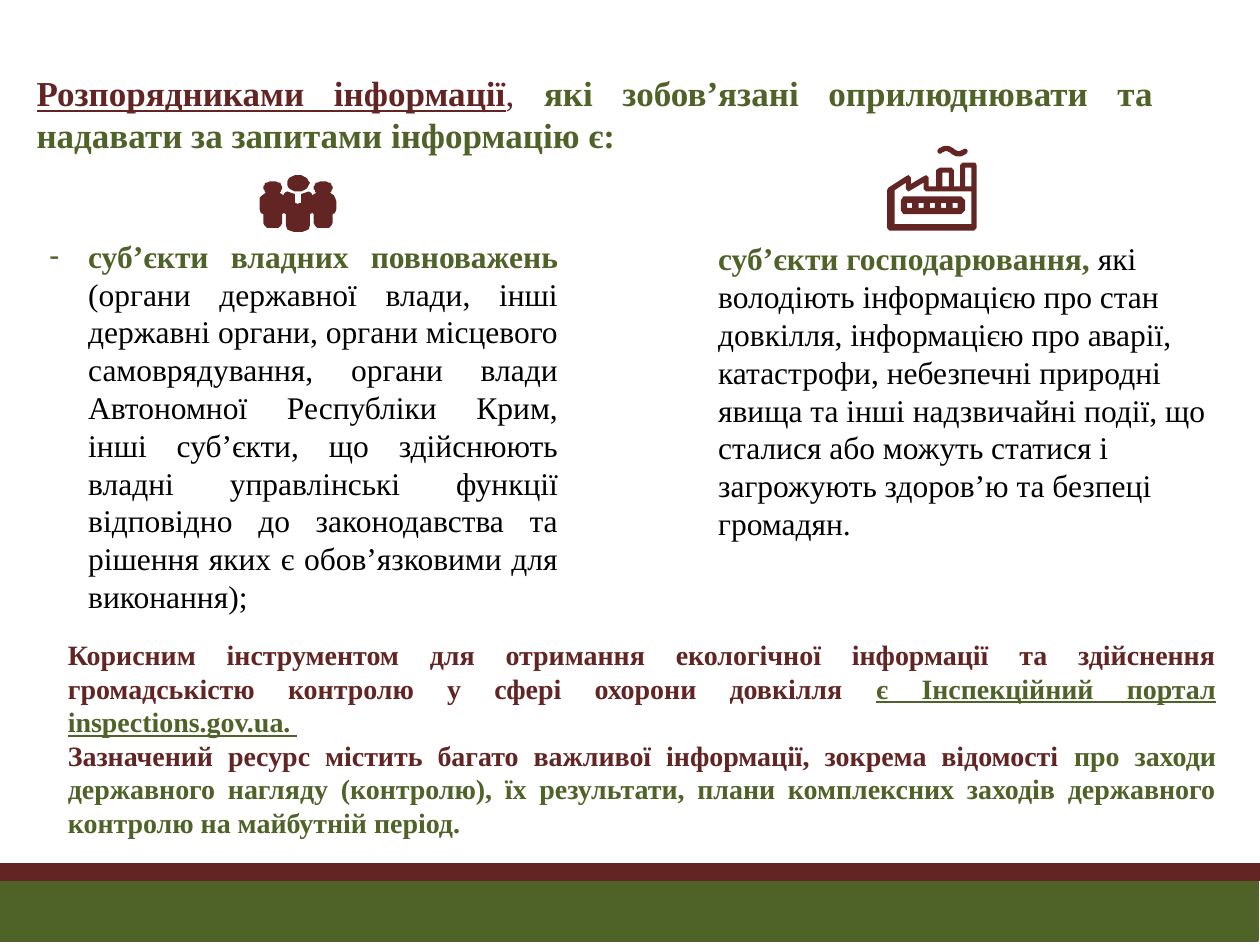
import math
from dataclasses import dataclass

from lxml import etree
from pptx import Presentation
from pptx.dml.color import RGBColor
from pptx.enum.shapes import MSO_SHAPE
from pptx.enum.text import MSO_ANCHOR, MSO_AUTO_SIZE, PP_ALIGN
from pptx.oxml.ns import qn
from pptx.util import Inches, Pt

RECTANGLE = MSO_SHAPE.RECTANGLE
TOP = MSO_ANCHOR.TOP
NO_AUTOFIT = MSO_AUTO_SIZE.NONE
LEFT = PP_ALIGN.LEFT
JUSTIFY = PP_ALIGN.JUSTIFY


@dataclass(frozen=True)
class Theme:
    """Colours and type of the slide."""
    font: str = "Times New Roman"
    green: RGBColor = RGBColor(0x4F, 0x62, 0x28)
    maroon: RGBColor = RGBColor(0x63, 0x25, 0x23)
    black: RGBColor = RGBColor(0, 0, 0)
    title_size: Pt = Pt(20)
    body_size: Pt = Pt(18)
    note_size: Pt = Pt(16)
    line_width: Pt = Pt(2)
    smoke_width: Pt = Pt(3)


THEME = Theme()


def place(shape, box):
    """Move and size a shape to a box given in inches."""
    shape.left, shape.top, shape.width, shape.height = map(Inches, box)


def paint(shape, color, line_width=None):
    """Give a shape a flat fill and an optional line of the same colour."""
    shape.shadow.inherit = False
    shape.fill.solid()
    shape.fill.fore_color.rgb = color
    if line_width is None:
        shape.line.fill.background()
    else:
        shape.line.color.rgb = color
        shape.line.width = line_width


def add_band(slide, box, color):
    """Add a flat full-width band."""
    band = slide.shapes.add_shape(RECTANGLE, *map(Inches, box))
    paint(band, color, THEME.line_width)


def set_bullet(paragraph, character, indent):
    """Set a hanging bullet, or none when the character is empty."""
    properties = paragraph._p.get_or_add_pPr()
    properties.set("marL", str(Inches(indent)))
    properties.set("indent", str(-Inches(indent)))
    if character:
        etree.SubElement(properties, qn("a:buChar")).set("char", character)
    else:
        etree.SubElement(properties, qn("a:buNone"))


def write(shape, paragraphs, size, alignment, bullet="", indent=0):
    """Fill a text shape with paragraphs of (text, colour, bold, underline) runs."""
    frame = shape.text_frame
    frame.word_wrap = True
    frame.auto_size = NO_AUTOFIT
    frame.vertical_anchor = TOP
    for index, runs in enumerate(paragraphs):
        paragraph = frame.add_paragraph() if index else frame.paragraphs[0]
        paragraph.alignment = alignment
        paragraph.space_before = Pt(0)
        set_bullet(paragraph, bullet, indent)
        for text, color, bold, underline in runs:
            run = paragraph.add_run()
            run.text = text
            run.font.name = THEME.font
            run.font.size = size
            run.font.color.rgb = color
            run.font.bold = bold
            run.font.underline = underline


def add_outline(slide, left, top, contours):
    """Add one filled freeform from contours in hundredths of an inch."""
    builder = slide.shapes.build_freeform(*contours[0][0], scale=Inches(0.01))
    builder.add_line_segments(contours[0][1:], close=True)
    for contour in contours[1:]:
        builder.move_to(*contour[0])
        builder.add_line_segments(contour[1:], close=True)
    paint(builder.convert_to_shape(Inches(left), Inches(top)), THEME.maroon)


def rectangle(left, top, right, bottom):
    """Return the corners of a rectangle."""
    return [(left, top), (left, bottom), (right, bottom), (right, top)]


def arc(center_x, center_y, radius_x, radius_y, start, end, steps=24):
    """Return points along an elliptical arc between two angles in degrees."""
    angles = [math.radians(start + (end - start) * i / steps) for i in range(steps + 1)]
    return [(center_x + radius_x * math.cos(a), center_y + radius_y * math.sin(a))
            for a in angles]


def add_people_icon(slide, left, top):
    """Draw three people, the middle one in front with a tie."""
    axis = 30.5
    add_outline(slide, left, top, [arc(axis, 6.5, 9, 6.5, 0, 360)])
    collar = [(axis, 23), (29, 22.5), (28, 21.5), (28, 15), (25, 14.5), (22, 13),
              (20, 14.5), (19, 16), (16, 14)]
    side_head = arc(10.5, 10, 7.5, 5, 45, -225)
    side_body = [(5, 14), (2, 16), (0.5, 18), (0, 21), (0, 27), (1, 29.5), (3, 31),
                 (3, 38), (4, 40.5), (6, 42), (9, 42.5), (12, 42.5), (15, 42),
                 (17, 40.5), (18, 38), (18, 31), (19, 30)]
    front_legs = [(21, 31), (21, 40), (22, 43), (24, 44.5), (27, 45)]
    half = collar + side_head + side_body + front_legs
    mirrored = [(2 * axis - x, y) for x, y in reversed(half)]
    add_outline(slide, left, top, [half + mirrored])


def add_factory_icon(slide, left, top):
    """Draw a factory with a row of windows and a wave of smoke."""
    walls = [(0, 35), (1, 33), (15, 24), (17, 23), (19, 25), (19, 30),
             (29, 24), (31, 23), (33, 25), (33, 32), (39, 32), (39, 19),
             (42, 17), (51, 17), (53, 19), (53, 32), (58, 32), (58, 15),
             (60, 13), (70, 13), (71, 15), (71, 65), (69, 67), (2, 67), (0, 65)]
    interior = [(6, 35), (15, 29), (15, 34), (17, 36), (29, 29), (29, 34),
                (31, 36), (67, 36), (67, 62), (6, 62)]
    chimneys = [rectangle(44, 21, 49, 32), rectangle(62, 17, 67, 32)]
    add_outline(slide, left, top, [walls, interior, *chimneys])

    frame = [(13, 40), (59, 40), (62, 43), (62, 51), (59, 54), (13, 54),
             (11, 51), (11, 43)]
    windows = [rectangle(16 + 9 * i, 45, 20 + 9 * i, 49) for i in range(5)]
    add_outline(slide, left, top, [frame, *windows])

    wave = [(42 + i, 4 - 2 * math.sin(2 * math.pi * i / 20)) for i in range(21)]
    builder = slide.shapes.build_freeform(*wave[0], scale=Inches(0.01))
    builder.add_line_segments(wave[1:], close=False)
    smoke = builder.convert_to_shape(Inches(left), Inches(top))
    smoke.shadow.inherit = False
    smoke.fill.background()
    smoke.line.color.rgb = THEME.maroon
    smoke.line.width = THEME.smoke_width
    smoke.line._get_or_add_ln().set("cap", "rnd")


def add_title(slide, box):
    """Write the heading."""
    title = slide.shapes.title
    place(title, box)
    write(title, [[
        ("Розпорядниками інформації", THEME.maroon, True, True),
        (", ", THEME.maroon, False, False),
        ("які зобов’язані оприлюднювати та надавати за запитами інформацію є:",
         THEME.green, True, False),
    ]], THEME.title_size, JUSTIFY)


def add_column(slide, index, box, term, details, alignment, bullet="", indent=0):
    """Write one kind of information holder into a body placeholder."""
    body = slide.placeholders[index]
    place(body, box)
    write(body, [[(term, THEME.green, True, False),
                  (details, THEME.black, False, False)]],
          THEME.body_size, alignment, bullet, indent)


def add_portal_note(slide, box):
    """Write the note on the inspection portal."""
    note = slide.shapes.add_textbox(*map(Inches, box))
    write(note, [
        [("Корисним інструментом для отримання екологічної інформації та здійснення "
          "громадськістю контролю у сфері охорони довкілля ", THEME.maroon, True, False),
         ("є Інспекційний портал inspections.gov.ua. ", THEME.green, True, True)],
        [("Зазначений ресурс містить багато важливої інформації, зокрема відомості ",
          THEME.maroon, True, False),
         ("про заходи державного нагляду (контролю), їх результати, плани комплексних "
          "заходів державного контролю на майбутній період. ", THEME.green, True, False)],
    ], THEME.note_size, JUSTIFY)


def main():
    """Build and save the slide."""
    presentation = Presentation()
    presentation.slide_width, presentation.slide_height = Inches(10), Inches(7.5)
    slide = presentation.slides.add_slide(presentation.slide_layouts[3])
    add_band(slide, (-0.02, 6.94, 10, 0.52), THEME.green)
    add_band(slide, (0, 6.86, 10, 0.12), THEME.maroon)
    add_title(slide, (0.19, 0.52, 9.06, 0.77))
    add_column(slide, 1, (0.29, 1.83, 4.24, 3.43), "суб’єкти владних повноважень ",
               "(органи державної влади, інші державні органи, органи місцевого "
               "самоврядування, органи влади Автономної Республіки Крим, інші суб’єкти, "
               "що здійснюють владні управлінські функції відповідно до законодавства "
               "та рішення яких є обов’язковими для виконання);", JUSTIFY, "-", 0.31)
    add_column(slide, 2, (5.6, 1.85, 4.11, 2.83), "суб’єкти господарювання, ",
               "які володіють інформацією про стан довкілля, інформацією про аварії, "
               "катастрофи, небезпечні природні явища та інші надзвичайні події, що "
               "сталися або можуть статися і загрожують здоров’ю та безпеці громадян.",
               LEFT)
    add_people_icon(slide, 2.06, 1.39)
    add_factory_icon(slide, 7.04, 1.16)
    add_portal_note(slide, (0.44, 5.01, 9.31, 1.72))
    presentation.save("out.pptx")


if __name__ == "__main__":
    main()
